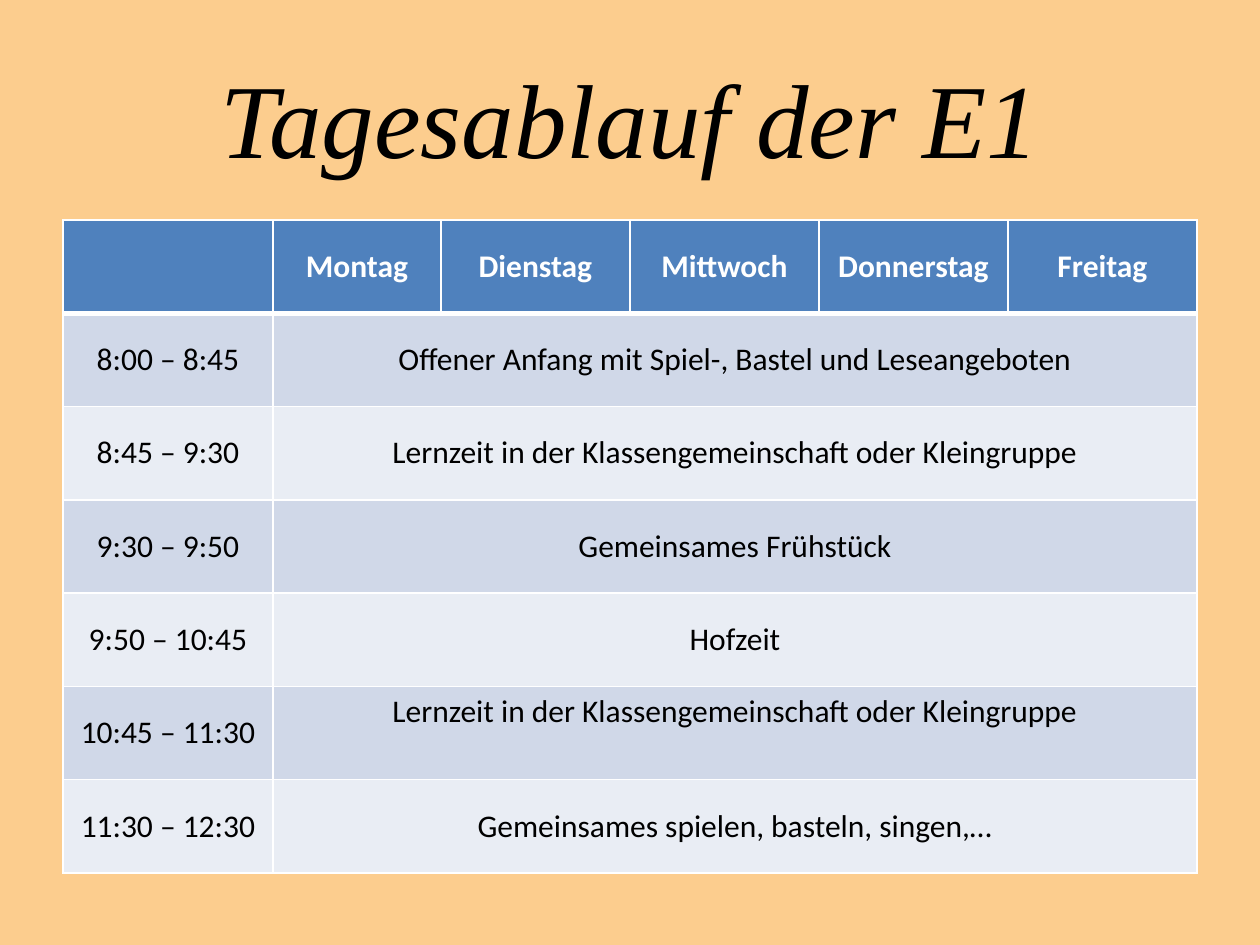
from dataclasses import dataclass

from lxml.etree import SubElement
from pptx import Presentation
from pptx.dml.color import RGBColor
from pptx.enum.text import MSO_ANCHOR, PP_ALIGN
from pptx.oxml.ns import qn
from pptx.util import Emu, Pt

PX = 914400 / 126  # EMU per px


@dataclass(frozen=True)
class Theme:
    background: str = "FCCD8E"
    header: str = "4F81BD"
    bands: tuple = ("D0D8E8", "E9EDF4")
    border: str = "FFFFFF"
    header_text: str = "FFFFFF"
    text: str = "000000"
    title_font: str = "Times New Roman"
    table_font: str = "Calibri"
    title_size: int = 60
    table_size: int = 18
    thin: int = 1
    thick: int = 3


THEME = Theme()
DAYS = ["", "Montag", "Dienstag", "Mittwoch", "Donnerstag", "Freitag"]
LESSON = "Lernzeit in der Klassengemeinschaft oder Kleingruppe"
# Time, activity, vertical anchor of the activity
SCHEDULE = [
    ("8:00 – 8:45", "Offener Anfang mit Spiel-, Bastel und Leseangeboten", MSO_ANCHOR.MIDDLE),
    ("8:45 – 9:30", LESSON, MSO_ANCHOR.MIDDLE),
    ("9:30 – 9:50", "Gemeinsames Frühstück", MSO_ANCHOR.MIDDLE),
    ("9:50 – 10:45", "Hofzeit", MSO_ANCHOR.MIDDLE),
    ("10:45 – 11:30", LESSON, MSO_ANCHOR.TOP),
    ("11:30 – 12:30", "Gemeinsames spielen, basteln, singen,…", MSO_ANCHOR.MIDDLE),
]
COLUMN_WIDTHS = [210, 168, 189, 189, 189, 189]


def px(length):
    return Emu(round(length * PX))


def color(value):
    return RGBColor.from_string(value)


def write(frame, text, font_name, size, text_color, bold=False, italic=False):
    """Put one centred, styled paragraph into a text frame."""
    para = frame.paragraphs[0]
    para.text = text
    para.alignment = PP_ALIGN.CENTER
    font = para.font
    font.name, font.size = font_name, Pt(size)
    font.bold, font.italic = bold, italic
    font.color.rgb = color(text_color)


def add_title(page, text, left, top, width, height):
    box = page.shapes.add_textbox(px(left), px(top), px(width), px(height))
    frame = box.text_frame
    frame.word_wrap = True
    frame.vertical_anchor = MSO_ANCHOR.MIDDLE
    write(frame, text, THEME.title_font, THEME.title_size, THEME.text, italic=True)


def set_borders(cell, top, bottom):
    """Draw the four cell borders; top and bottom are widths in points."""
    properties = cell._tc.get_or_add_tcPr()
    widths = {"a:lnL": THEME.thin, "a:lnR": THEME.thin, "a:lnT": top, "a:lnB": bottom}
    for tag, width in widths.items():
        line = SubElement(properties, qn(tag), w=str(Pt(width)))
        fill = SubElement(line, qn("a:solidFill"))
        SubElement(fill, qn("a:srgbClr"), val=THEME.border)


def style_cell(cell, row):
    # Borders come before the fill in the cell properties
    set_borders(cell,
                top=THEME.thick if row == 1 else THEME.thin,
                bottom=THEME.thick if row == 0 else THEME.thin)
    cell.fill.solid()
    cell.fill.fore_color.rgb = color(THEME.bands[(row - 1) % 2] if row else THEME.header)
    cell.vertical_anchor = MSO_ANCHOR.MIDDLE


def fill_cell(cell, text, text_color=THEME.text, bold=False):
    write(cell.text_frame, text, THEME.table_font, THEME.table_size, text_color, bold)


def add_timetable(page, left, top, height):
    row_count, column_count = len(SCHEDULE) + 1, len(DAYS)
    table = page.shapes.add_table(row_count, column_count, px(left), px(top),
                                  px(sum(COLUMN_WIDTHS)), px(height)).table
    table.first_row = table.horz_banding = False
    for column, width in zip(table.columns, COLUMN_WIDTHS):
        column.width = px(width)
    for row in range(row_count):
        table.rows[row].height = px(height / row_count)
        for column in range(column_count):
            style_cell(table.cell(row, column), row)

    # Weekday header
    for column, day in enumerate(DAYS):
        fill_cell(table.cell(0, column), day, THEME.header_text, bold=True)

    # Each activity spans all weekdays
    for row, (time, activity, anchor) in enumerate(SCHEDULE, start=1):
        fill_cell(table.cell(row, 0), time)
        activity_cell = table.cell(row, 1)
        activity_cell.merge(table.cell(row, column_count - 1))
        fill_cell(activity_cell, activity)
        activity_cell.vertical_anchor = anchor


def main():
    deck = Presentation()
    deck.slide_width, deck.slide_height = px(1260), px(945)
    page = deck.slides.add_slide(deck.slide_layouts[6])
    page.background.fill.solid()
    page.background.fill.fore_color.rgb = color(THEME.background)

    add_timetable(page, left=63, top=220, height=653)
    add_title(page, "Tagesablauf der E1", left=63, top=38, width=1134, height=157)
    deck.save("out.pptx")


if __name__ == "__main__":
    main()
